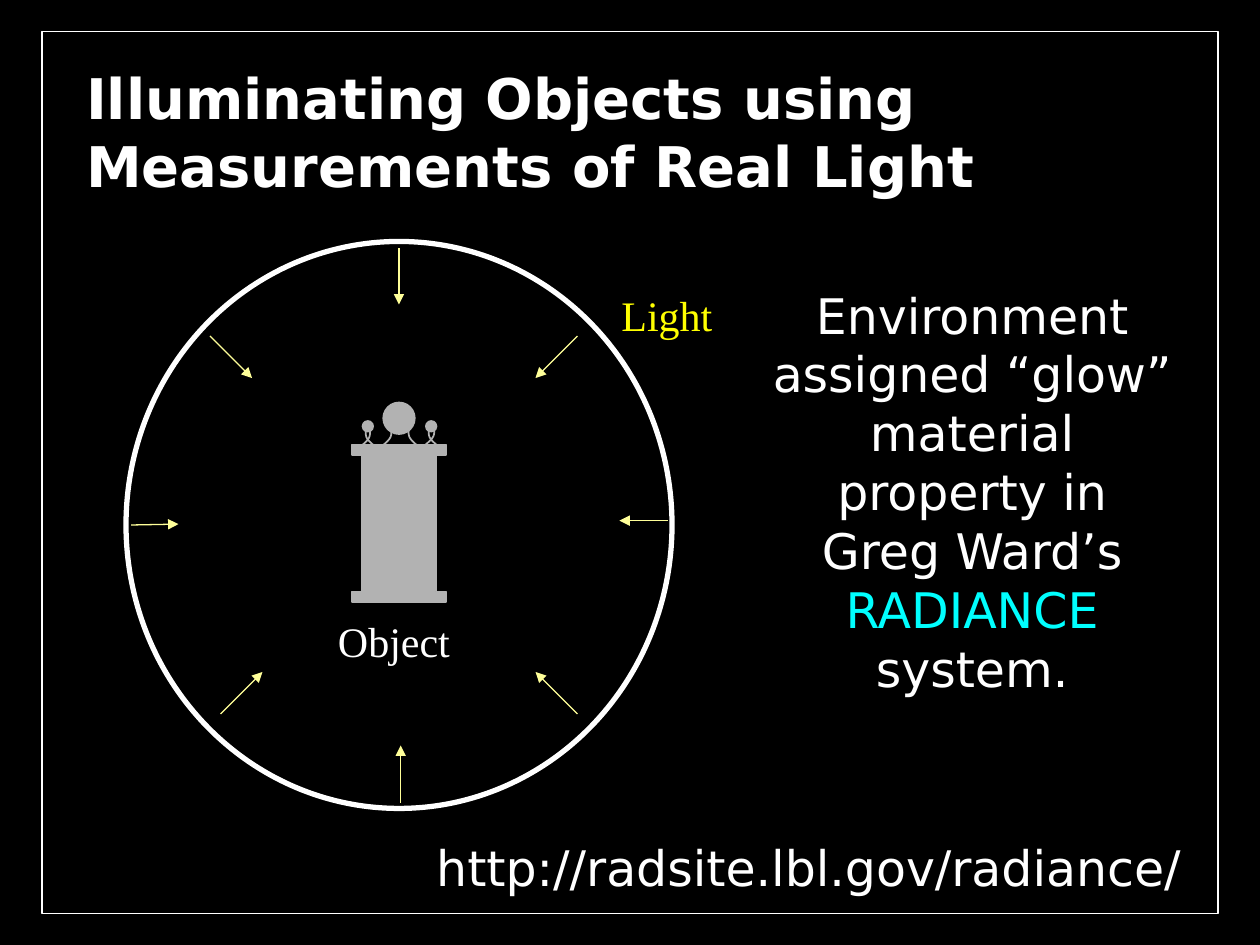
from lxml import etree
from pptx import Presentation
from pptx.dml.color import RGBColor
from pptx.enum.shapes import MSO_CONNECTOR as Connector, MSO_SHAPE as Shape
from pptx.enum.text import MSO_ANCHOR as Anchor, PP_ALIGN as Align
from pptx.oxml.ns import qn
from pptx.util import Pt

COLORS = {
    "black": "000000", "white": "FFFFFF", "gray": "B2B2B2",
    "yellow": "FFFF00", "pale": "FFFF99", "cyan": "00FFFF",
}
SANS, SERIF = "DejaVu Sans", "Times New Roman"

# Arrow start and end, relative to the circle's box
LIGHT_RAYS = [
    ((156, 4), (156, 36)), ((3, 162), (30, 161.5)),
    ((309.5, 159.5), (282, 159.5)), ((157, 321), (157, 288)),
    ((48, 54), (72, 78)), ((258, 54), (234, 78)),
    ((258, 270), (234, 246)), ((54, 270), (78, 246)),
]
# Outline of the pedestal, relative to the statue's box
PEDESTAL = [
    (6, 108), (0, 108), (0, 114), (54, 114), (54, 108), (48, 108),
    (48, 30), (54, 30), (54, 24), (0, 24), (0, 30), (6, 30),
]
HEADS = [(18, 0, 18), (42.4, 10.6, 6), (6.2, 10.6, 6)]
# Start and direction of each stem; all share one shape
STEMS = [(33, 14, 1), (44.5, 14, 1), (46.7, 13.5, -1),
         (22.2, 14, -1), (8.5, 14.2, 1), (10, 14.2, -1)]
STEM_CURVES = [
    [(0, 0), (-0.5, 1.6), (-0.8, 3.7), (0, 5.8)],
    [(0, 5.8), (1, 7.8), (3.5, 9.7), (5.8, 11.7)],
]


def color(name):
    return RGBColor.from_string(COLORS[name])


def style(shape, line, width=1, fill=None):
    shape.shadow.inherit = False
    shape.line.color.rgb = color(line)
    shape.line.width = Pt(width)
    if fill:
        shape.fill.solid()
        shape.fill.fore_color.rgb = color(fill)
    else:
        shape.fill.background()


def write(shape, *runs, size, font, bold=False, align=Align.LEFT,
          anchor=Anchor.TOP, wrap=True):
    """Fill the shape with (text, color) runs; a newline is a line break."""
    frame = shape.text_frame
    frame.word_wrap = wrap
    frame.vertical_anchor = anchor
    paragraph = frame.paragraphs[0]
    paragraph.alignment = align
    for text, color_name in runs:
        for index, line in enumerate(text.split("\n")):
            if index:
                paragraph.add_line_break()
            run = paragraph.add_run()
            run.text = line
            run.font.size = Pt(size)
            run.font.name = font
            run.font.bold = bold
            run.font.color.rgb = color(color_name)


def add_text(slide, box, *runs, **text_format):
    write(slide.shapes.add_textbox(*map(Pt, box)), *runs, **text_format)


def add_title(slide, box, text):
    title = slide.shapes.title
    title.left, title.top, title.width, title.height = map(Pt, box)
    write(title, (text, "white"), size=32, font=SANS, bold=True,
          anchor=Anchor.MIDDLE)


def add_arrow(slide, start, end):
    arrow = slide.shapes.add_connector(
        Connector.STRAIGHT, *map(Pt, (*start, *end)))
    arrow.line.color.rgb = color("pale")
    arrow.line.width = Pt(0.75)
    line = arrow.line._get_or_add_ln()
    etree.SubElement(line, qn("a:tailEnd"), type="triangle")
    etree.SubElement(arrow._element.spPr, qn("a:effectLst"))


def bezier(points, steps=6):
    """Points along a cubic curve, without its start."""
    for step in range(1, steps + 1):
        t = step / steps
        weights = ((1 - t) ** 3, 3 * t * (1 - t) ** 2,
                   3 * t ** 2 * (1 - t), t ** 3)
        yield tuple(sum(weight * point[axis]
                        for weight, point in zip(weights, points))
                    for axis in (0, 1))


def add_outline(shapes, points, close, fill=None):
    start, *rest = [(Pt(x), Pt(y)) for x, y in points]
    builder = shapes.build_freeform(*start)
    builder.add_line_segments(rest, close=close)
    style(builder.convert_to_shape(), "gray", fill=fill)


def add_statue(slide, left, top):
    shapes = slide.shapes.add_group_shape().shapes
    add_outline(shapes, [(left + x, top + y) for x, y in PEDESTAL],
                close=True, fill="gray")
    for x, y, size in HEADS:
        head = shapes.add_shape(
            Shape.OVAL, *map(Pt, (left + x, top + y, size, size)))
        style(head, "gray", fill="gray")
    curve = [(0, 0)] + [point for part in STEM_CURVES for point in bezier(part)]
    for x, y, direction in STEMS:
        add_outline(shapes, [(left + x + direction * dx, top + y + dy)
                             for dx, dy in curve], close=False)


def add_light_diagram(slide, box):
    left, top, width, height = box
    circle = slide.shapes.add_shape(Shape.OVAL, *map(Pt, box))
    style(circle, "white", width=3)
    add_text(slide, (left + 114, top + 210, 84, 36), ("Object", "white"),
             size=24, font=SERIF)
    add_text(slide, (left + 276, top + 24, 70, 36), ("Light", "yellow"),
             size=24, font=SERIF, wrap=False)
    for ray in LIGHT_RAYS:
        add_arrow(slide, *[(left + x, top + y) for x, y in ray])
    add_statue(slide, left + 129, top + 92)


def build_slide(presentation):
    slide = presentation.slides.add_slide(presentation.slide_layouts[5])
    slide.background.fill.solid()
    slide.background.fill.fore_color.rgb = color("black")
    frame = slide.shapes.add_shape(Shape.RECTANGLE, *map(Pt, (24, 18, 672, 504)))
    style(frame, "white")
    add_title(slide, (42, 30, 636, 90),
              "Illuminating Objects using Measurements of Real Light")
    add_light_diagram(slide, (72, 138, 312, 324))
    add_text(slide, (228, 475, 468, 41),
             ("http://radsite.lbl.gov/radiance/", "white"),
             size=28, font=SANS, align=Align.CENTER)
    add_text(slide, (432, 159.4, 247, 243),
             ("Environment assigned “glow” material property in\nGreg Ward’s ",
              "white"),
             ("RADIANCE", "cyan"), (" system.", "white"),
             size=28, font=SANS, align=Align.CENTER)


def main():
    presentation = Presentation()
    presentation.slide_width, presentation.slide_height = Pt(720), Pt(540)
    build_slide(presentation)
    presentation.save("out.pptx")


if __name__ == "__main__":
    main()
